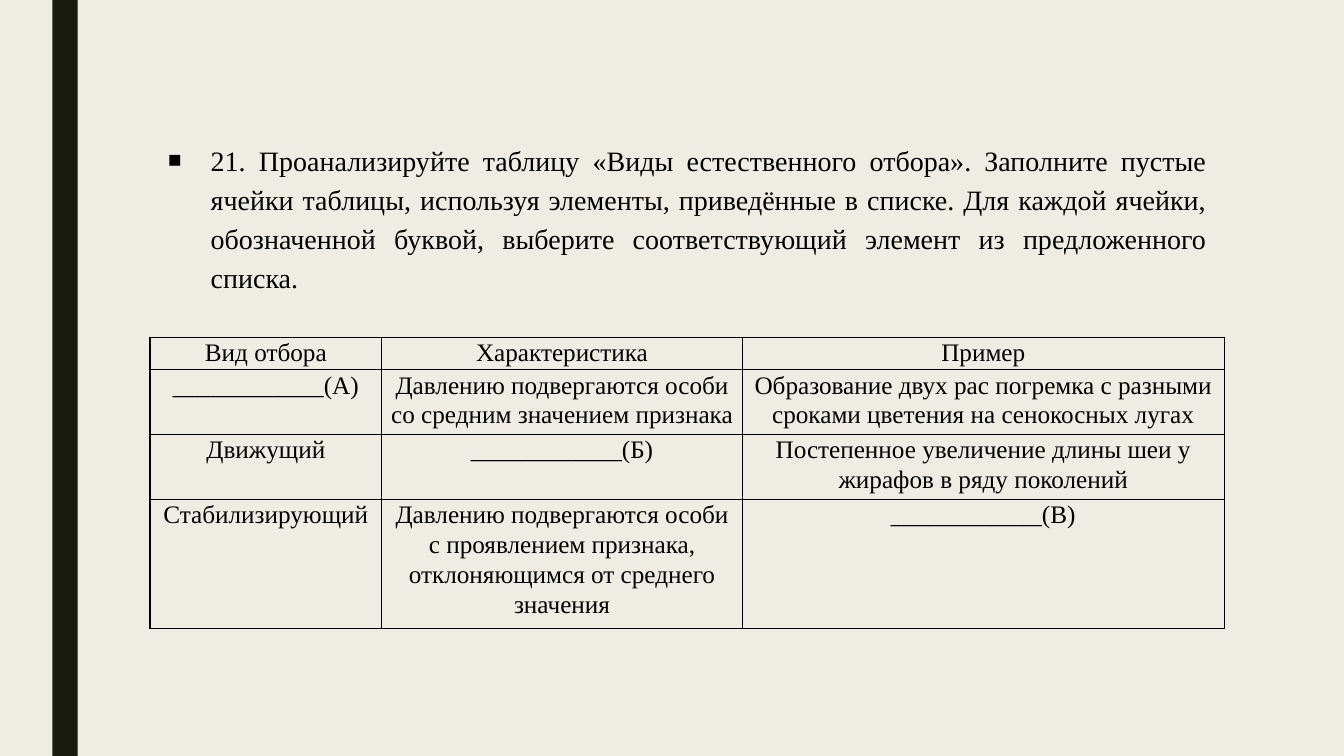
from lxml import etree
from pptx import Presentation
from pptx.dml.color import RGBColor
from pptx.enum import shapes, text
from pptx.oxml import ns
from pptx.util import Cm, Pt

CREAM = RGBColor(0xEF, 0xED, 0xE3)
OLIVE = RGBColor(0x19, 0x1B, 0x0E)
BLACK = RGBColor(0, 0, 0)
FONT = "Times New Roman"

TASK = ("21. Проанализируйте таблицу «Виды естественного отбора». Заполните "
        "пустые ячейки таблицы, используя элементы, приведённые в списке. "
        "Для каждой ячейки, обозначенной буквой, выберите соответствующий "
        "элемент из предложенного списка.")
ROWS = [
    ("Вид отбора", "Характеристика", "Пример"),
    ("____________(А)",
     "Давлению подвергаются особи со средним значением признака",
     "Образование двух рас погремка с разными сроками цветения на сенокосных лугах"),
    ("Движущий", "____________(Б)",
     "Постепенное увеличение длины шеи у жирафов в ряду поколений"),
    ("Стабилизирующий",
     "Давлению подвергаются особи с проявлением признака, отклоняющимся от среднего значения",
     "____________(В)"),
]
COL_WIDTHS = (5.84, 9.09, 12.14)
LINE_COUNTS = (1, 2, 2, 4)
LINE_HEIGHT = 0.75

TASK_FORMAT = {"alignment": text.PP_ALIGN.JUSTIFY, "line_spacing": 1.16,
               "space_before": Pt(10), "space_after": Pt(8)}
HEAD_FORMAT = {"alignment": text.PP_ALIGN.CENTER, "line_spacing": 1.07,
               "space_before": Pt(4), "space_after": Pt(4)}
CELL_FORMAT = {**HEAD_FORMAT, "space_before": Pt(0), "space_after": Pt(8)}
CELL_MARGINS = {"margin_left": Cm(0.18), "margin_right": Cm(0.18),
                "margin_top": 0, "margin_bottom": 0}


def set_all(obj, values):
    """Set every attribute named in values on obj."""
    for name, value in values.items():
        setattr(obj, name, value)


def write(tf, words, size, fmt):
    """Write one formatted paragraph into a text frame and return it."""
    p = tf.paragraphs[0]
    set_all(p, fmt)
    r = p.add_run()
    r.text = words
    set_all(r.font, {"name": FONT, "size": Pt(size)})
    r.font.color.rgb = BLACK
    return p


def add_bullet(p, indent):
    """Give a paragraph a square bullet with a hanging indent."""
    pPr = p._p.get_or_add_pPr()
    pPr.set("marL", str(indent))
    pPr.set("indent", str(-indent))
    for tag, key, value in (("buSzPct", "val", "80000"),
                            ("buFont", "typeface", FONT),
                            ("buChar", "char", "■")):
        etree.SubElement(pPr, ns.qn(f"a:{tag}")).set(key, value)


def add_borders(cell):
    """Draw a thin solid border on all four sides of a cell."""
    tcPr = cell._tc.get_or_add_tcPr()
    for i, side in enumerate(("lnL", "lnR", "lnT", "lnB")):
        ln = etree.Element(ns.qn(f"a:{side}"), w=str(Pt(1)))
        fill = etree.SubElement(ln, ns.qn("a:solidFill"))
        etree.SubElement(fill, ns.qn("a:srgbClr"), val=str(BLACK))
        tcPr.insert(i, ln)


def add_bar(s, left, width, height):
    """Add the full-height vertical bar."""
    sp = s.shapes.add_shape(shapes.MSO_SHAPE.RECTANGLE, left, 0, width, height)
    sp.shadow.inherit = False
    sp.fill.solid()
    sp.fill.fore_color.rgb = OLIVE
    sp.line.fill.background()


def add_task(s, left, top, width, height):
    """Add the bulleted task wording."""
    tf = s.shapes.add_textbox(left, top, width, height).text_frame
    tf.word_wrap = True
    add_bullet(write(tf, TASK, 20, TASK_FORMAT), Cm(1.07))


def add_selection_table(s, left, top):
    """Add the table of kinds of natural selection."""
    heights = [n * LINE_HEIGHT for n in LINE_COUNTS]
    table = s.shapes.add_table(len(ROWS), len(COL_WIDTHS), left, top,
                               Cm(sum(COL_WIDTHS)), Cm(sum(heights))).table
    set_all(table, {"first_row": False, "horz_banding": False})
    for col, width in zip(table.columns, COL_WIDTHS):
        col.width = Cm(width)
    for i, (row, height) in enumerate(zip(table.rows, heights)):
        row.height = Cm(height)
        for cell, words in zip(row.cells, ROWS[i]):
            set_all(cell, CELL_MARGINS)
            cell.fill.background()
            add_borders(cell)
            write(cell.text_frame, words, 18, CELL_FORMAT if i else HEAD_FORMAT)


def main():
    """Build the slide and save it."""
    prs = Presentation()
    set_all(prs, {"slide_width": Cm(33.87), "slide_height": Cm(19.05)})
    s = prs.slides.add_slide(prs.slide_layouts[6])
    s.background.fill.solid()
    s.background.fill.fore_color.rgb = CREAM
    add_bar(s, Cm(1.32), Cm(0.64), prs.slide_height)
    add_task(s, Cm(3.99), Cm(3.35), Cm(26.67), Cm(15.57))
    add_selection_table(s, Cm(3.78), Cm(8.5))
    prs.save("out.pptx")


if __name__ == "__main__":
    main()
